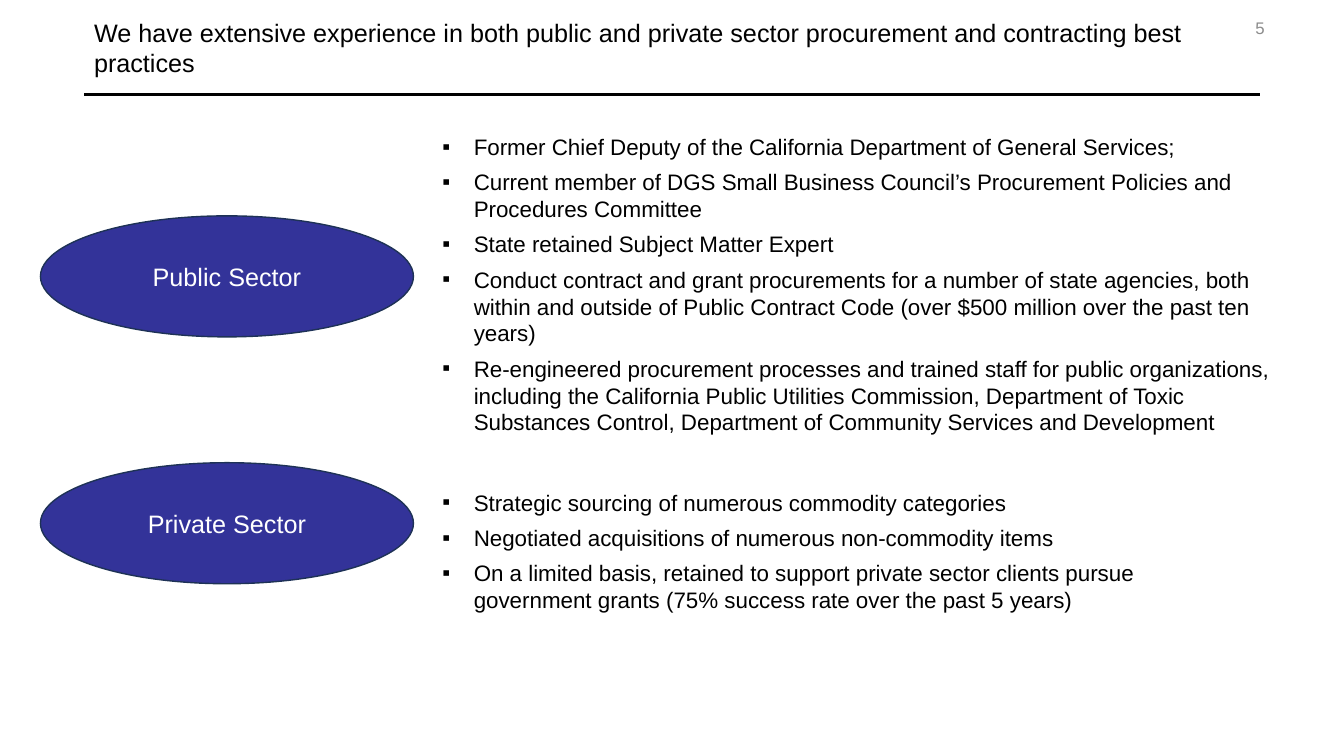
from lxml import etree
from pptx import Presentation
from pptx.dml.color import RGBColor
from pptx.enum.shapes import MSO_CONNECTOR as CONN, MSO_SHAPE as SHAPE
from pptx.enum.text import MSO_ANCHOR as ANCHOR, MSO_AUTO_SIZE as AUTO, PP_ALIGN as ALIGN
from pptx.oxml.ns import qn
from pptx.util import Cm, Pt

BLACK = RGBColor(0x00, 0x00, 0x00)
WHITE = RGBColor(0xFF, 0xFF, 0xFF)
GREY = RGBColor(0x8C, 0x8C, 0x8C)
INDIGO = RGBColor(0x33, 0x33, 0x99)
NAVY = RGBColor(0x1E, 0x32, 0x56)

TITLE = "We have extensive experience in both public and private sector procurement and contracting best practices"
PAGE = "5"
SECTORS = [
    {"name": "Public Sector", "oval_top": 5.44, "list_box": (10.9, 3.23, 21.97, 7.95), "points": [
        "Former Chief Deputy of the California Department of General Services;",
        "Current member of DGS Small Business Council’s Procurement Policies and Procedures Committee",
        "State retained Subject Matter Expert",
        "Conduct contract and grant procurements for a number of state agencies, both within and outside of "
        "Public Contract Code (over $500 million over the past ten years)",
        "Re-engineered procurement processes and trained staff for public organizations, including the "
        "California Public Utilities Commission, Department of Toxic Substances Control, Department of "
        "Community Services and Development",
    ]},
    {"name": "Private Sector", "oval_top": 11.66, "list_box": (10.9, 12.19, 19.74, 3.43), "points": [
        "Strategic sourcing of numerous commodity categories",
        "Negotiated acquisitions of numerous non-commodity items",
        "On a limited basis, retained to support private sector clients pursue government grants "
        "(75% success rate over the past 5 years)",
    ]},
]

LEFT, RIGHT, RULE_Y = 2.12, 31.75, 2.39
OVAL_LEFT, OVAL_W, OVAL_H = 1.02, 9.4, 3.05
INDENT = Cm(0.79)


def write(sp, lines, size, color, align=ALIGN.LEFT, anchor=ANCHOR.MIDDLE, bullet=None):
    tf = sp.text_frame
    tf.word_wrap = True
    tf.vertical_anchor = anchor
    for i, line in enumerate(lines):
        p = tf.paragraphs[0] if i == 0 else tf.add_paragraph()
        p.alignment = align
        r = p.add_run()
        r.text = line
        for key, value in {"name": "Arial", "size": Pt(size)}.items():
            setattr(r.font, key, value)
        r.font.color.rgb = color
        if bullet:
            p.space_after = Pt(6)
            pPr = p._p.get_or_add_pPr()
            pPr.set("marL", str(INDENT))
            pPr.set("indent", str(-INDENT))
            etree.SubElement(pPr, qn("a:buFont")).set("typeface", "Arial")
            etree.SubElement(pPr, qn("a:buChar")).set("char", bullet)
    return tf


def add_text(s, box, lines, size, color, **style):
    return write(s.shapes.add_textbox(*map(Cm, box)), lines, size, color, **style)


def add_rule(s):
    line = s.shapes.add_connector(CONN.STRAIGHT, Cm(LEFT), Cm(RULE_Y), Cm(RIGHT), Cm(RULE_Y))
    line.line.color.rgb = BLACK
    line.line.width = Pt(2)
    etree.SubElement(line._element.spPr, qn("a:effectLst"))


def add_sector(s, sector):
    tf = add_text(s, sector["list_box"], sector["points"], 16, BLACK, anchor=ANCHOR.TOP, bullet="▪")
    tf.auto_size = AUTO.SHAPE_TO_FIT_TEXT
    oval = s.shapes.add_shape(SHAPE.OVAL, *map(Cm, (OVAL_LEFT, sector["oval_top"], OVAL_W, OVAL_H)))
    oval.shadow.inherit = False
    oval.fill.solid()
    oval.fill.fore_color.rgb = INDIGO
    oval.line.color.rgb = NAVY
    oval.line.width = Pt(1)
    write(oval, [sector["name"]], 18, WHITE, align=ALIGN.CENTER)


def main():
    prs = Presentation()
    prs.slide_width, prs.slide_height = Cm(33.87), Cm(19.05)
    s = prs.slides.add_slide(prs.slide_layouts[6])
    add_text(s, (31.22, 0.18, 1.07, 1.02), [PAGE], 12, GREY, align=ALIGN.CENTER)
    add_rule(s)
    add_text(s, (LEFT, 0, RIGHT - LEFT, RULE_Y), [TITLE], 18, BLACK)
    for sector in SECTORS:
        add_sector(s, sector)
    prs.save("out.pptx")


if __name__ == "__main__":
    main()
